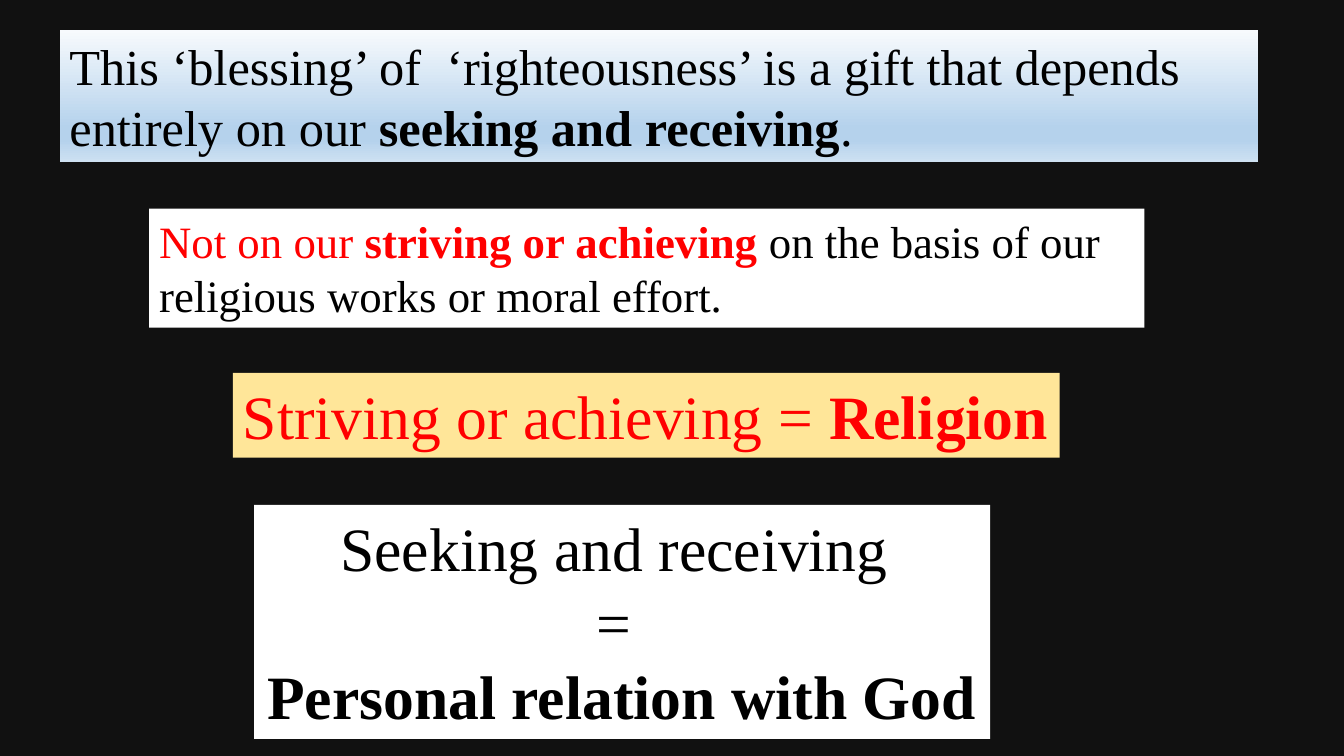
from lxml import etree
from pptx import Presentation
from pptx.dml.color import RGBColor
from pptx.enum.text import MSO_AUTO_SIZE, PP_ALIGN
from pptx.oxml.ns import qn
from pptx.util import Inches, Pt

FONT = "Times New Roman"
BLACK, RED, WHITE, CREAM = "000000", "FF0000", "FFFFFF", "FFE699"
BLUE_STOPS = [(0, "F7FAFD"), (74, "B5D2EC"), (83, "B5D2EC"), (100, "CEE1F2")]


def color(hex_code):
    return RGBColor.from_string(hex_code)


def fill_solid(fill, hex_code):
    fill.solid()
    fill.fore_color.rgb = color(hex_code)


def fill_gradient(shape, stops):
    """Fill from top to bottom with (percent, colour) stops."""
    shape.fill.gradient()
    shape.fill.gradient_angle = 270
    stop_list = shape._element.spPr.find(qn("a:gradFill")).find(qn("a:gsLst"))
    for old_stop in list(stop_list):
        stop_list.remove(old_stop)
    for percent, hex_code in stops:
        stop = etree.SubElement(stop_list, qn("a:gs"), pos=str(percent * 1000))
        etree.SubElement(stop, qn("a:srgbClr"), val=hex_code)


def add_statement(slide, box, paragraphs, size, wrap=True, align=PP_ALIGN.LEFT):
    """Add a text box; each paragraph is a list of (text, colour, bold) runs."""
    shape = slide.shapes.add_textbox(*map(Inches, box))
    frame = shape.text_frame
    frame.word_wrap = wrap
    frame.auto_size = MSO_AUTO_SIZE.SHAPE_TO_FIT_TEXT
    for index, runs in enumerate(paragraphs):
        paragraph = frame.add_paragraph() if index else frame.paragraphs[0]
        paragraph.alignment = align
        paragraph.font.name = FONT
        paragraph.font.size = Pt(size)
        for text, hex_code, bold in runs:
            run = paragraph.add_run()
            run.text = text
            run.font.color.rgb = color(hex_code)
            run.font.bold = bold
    return shape


def add_blessing(slide, box):
    runs = [
        ("This ‘blessing’ of  ‘righteousness’ is a gift that depends entirely on our ", BLACK, False),
        ("seeking and receiving", BLACK, True),
        (".", BLACK, False),
    ]
    fill_gradient(add_statement(slide, box, [runs], 36), BLUE_STOPS)


def add_contrast(slide, box):
    runs = [
        ("Not on our ", RED, False),
        ("striving or achieving ", RED, True),
        ("on the basis of our religious works or moral effort.", BLACK, False),
    ]
    fill_solid(add_statement(slide, box, [runs], 32).fill, WHITE)


def add_religion(slide, box):
    runs = [("Striving or achieving = ", RED, False), ("Religion", RED, True)]
    fill_solid(add_statement(slide, box, [runs], 44, wrap=False).fill, CREAM)


def add_relation(slide, box):
    paragraphs = [
        [("Seeking and receiving ", BLACK, False)],
        [("= ", BLACK, False)],
        [("Personal relation with God", BLACK, True)],
    ]
    shape = add_statement(slide, box, paragraphs, 44, wrap=False, align=PP_ALIGN.CENTER)
    fill_solid(shape.fill, WHITE)


def main():
    presentation = Presentation()
    presentation.slide_width = Inches(13.33)
    presentation.slide_height = Inches(7.5)
    slide = presentation.slides.add_slide(presentation.slide_layouts[6])
    fill_solid(slide.background.fill, "111111")
    add_contrast(slide, (1.48, 2.07, 9.87, 1.18))
    add_blessing(slide, (0.59, 0.3, 11.89, 1.31))
    add_religion(slide, (2.31, 3.7, 8.2, 0.84))
    add_relation(slide, (2.52, 5.01, 7.3, 2.32))
    presentation.save("out.pptx")


if __name__ == "__main__":
    main()
